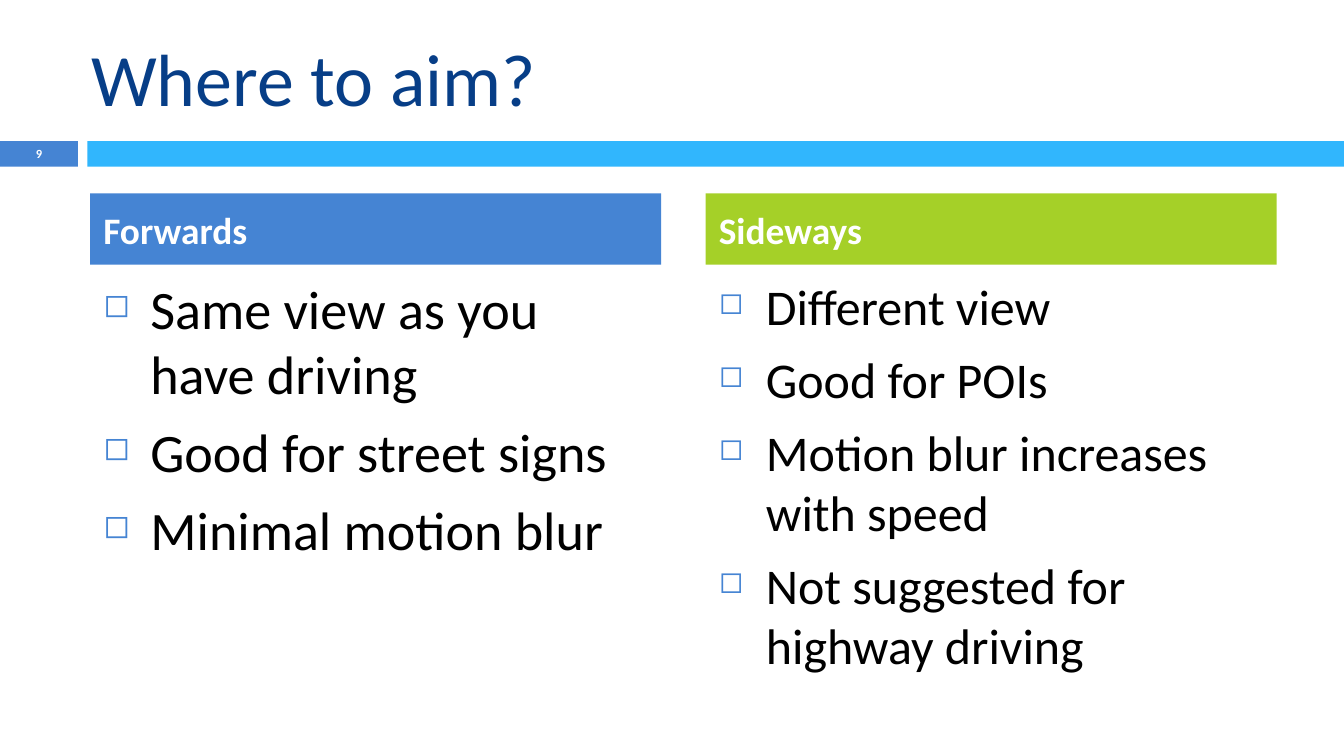
"""Build the "Where to aim?" slide comparing forward and sideways cameras."""
from dataclasses import dataclass

from lxml.etree import SubElement
from pptx import Presentation
from pptx.dml.color import RGBColor
from pptx.enum.shapes import MSO_SHAPE
from pptx.enum.text import MSO_ANCHOR as Anchor, PP_ALIGN as Align
from pptx.oxml.ns import qn
from pptx.shapes.autoshape import Shape
from pptx.slide import Slide
from pptx.text.text import _Paragraph as Paragraph
from pptx.util import Inches, Pt

NAVY = RGBColor(0x07, 0x3E, 0x87)
BLUE = RGBColor(0x45, 0x84, 0xD3)
SKY = RGBColor(0x31, 0xB6, 0xFD)
GREEN = RGBColor(0xA5, 0xD0, 0x28)
BLACK = RGBColor(0, 0, 0)
WHITE = RGBColor(0xFF, 0xFF, 0xFF)
FONT = "Calibri"
SLIDE_WIDTH = Inches(10)
SLIDE_HEIGHT = SLIDE_WIDTH * 9 // 16
COLUMN_LEFT, COLUMN_WIDTH, COLUMN_STEP = 0.67, 4.25, 4.58


@dataclass(frozen=True)
class Box:
    left: float
    top: float
    width: float
    height: float

    def lengths(self) -> tuple[Inches, ...]:
        return tuple(Inches(v) for v in (self.left, self.top, self.width, self.height))


@dataclass(frozen=True)
class Style:
    size: float
    color: RGBColor
    bold: bool = False
    align: Align = Align.LEFT
    anchor: Anchor = Anchor.MIDDLE
    bulleted: bool = False


@dataclass(frozen=True)
class Column:
    heading: str
    fill: RGBColor
    size: float
    points: tuple[str, ...]


TITLE = Style(39.6, NAVY)
PAGE_NUMBER = Style(6.7, WHITE, bold=True, align=Align.CENTER)
HEADING = Style(20, WHITE, bold=True)

COLUMNS = (
    Column("Forwards", BLUE, 29, (
        "Same view as you have driving",
        "Good for street signs",
        "Minimal motion blur",
    )),
    Column("Sideways", GREEN, 26.8, (
        "Different view",
        "Good for POIs",
        "Motion blur increases with speed",
        "Not suggested for highway driving",
    )),
)


def add_bullet(paragraph: Paragraph) -> None:
    properties = paragraph._p.get_or_add_pPr()
    indent = Inches(0.35)
    properties.set("marL", str(indent))
    properties.set("indent", str(-indent))
    color = SubElement(properties, qn("a:buClr"))
    SubElement(color, qn("a:srgbClr"), val=str(BLUE))
    SubElement(properties, qn("a:buSzPct"), val="60000")
    SubElement(properties, qn("a:buChar"), char="◻")


def write(shape: Shape, lines: tuple[str, ...], style: Style) -> None:
    frame = shape.text_frame
    frame.word_wrap = True
    frame.vertical_anchor = style.anchor
    for index, line in enumerate(lines):
        paragraph = frame.add_paragraph() if index else frame.paragraphs[0]
        paragraph.text = line
        paragraph.alignment = style.align
        if style.bulleted:
            add_bullet(paragraph)
        if index:
            paragraph.space_before = Pt(7)
        font = paragraph.font
        font.name, font.size, font.bold = FONT, Pt(style.size), style.bold
        font.color.rgb = style.color


def add_text(slide: Slide, box: Box, lines: tuple[str, ...], style: Style) -> None:
    write(slide.shapes.add_textbox(*box.lengths()), lines, style)


def add_bar(slide: Slide, box: Box, fill: RGBColor) -> Shape:
    shape = slide.shapes.add_shape(MSO_SHAPE.RECTANGLE, *box.lengths())
    shape.shadow.inherit = False
    shape.fill.solid()
    shape.fill.fore_color.rgb = fill
    shape.line.fill.background()
    return shape


def add_column(slide: Slide, column: Column, left: float) -> None:
    heading = add_bar(slide, Box(left, 1.44, COLUMN_WIDTH, 0.53), column.fill)
    write(heading, (column.heading,), HEADING)
    body = Style(column.size, BLACK, anchor=Anchor.TOP, bulleted=True)
    add_text(slide, Box(left, 2, COLUMN_WIDTH, 2.94), column.points, body)


def main() -> None:
    presentation = Presentation()
    presentation.slide_width, presentation.slide_height = SLIDE_WIDTH, SLIDE_HEIGHT
    slide = presentation.slides.add_slide(presentation.slide_layouts[6])
    add_bar(slide, Box(0, 1.05, 0.58, 0.19), BLUE)
    add_bar(slide, Box(0.65, 1.05, 9.35, 0.19), SKY)
    add_text(slide, Box(0.58, 0.22, 8.92, 0.71), ("Where to aim?",), TITLE)
    add_text(slide, Box(0, 1.04, 0.58, 0.2), ("9",), PAGE_NUMBER)
    for index, column in enumerate(COLUMNS):
        add_column(slide, column, COLUMN_LEFT + index * COLUMN_STEP)
    presentation.save("out.pptx")


if __name__ == "__main__":
    main()
